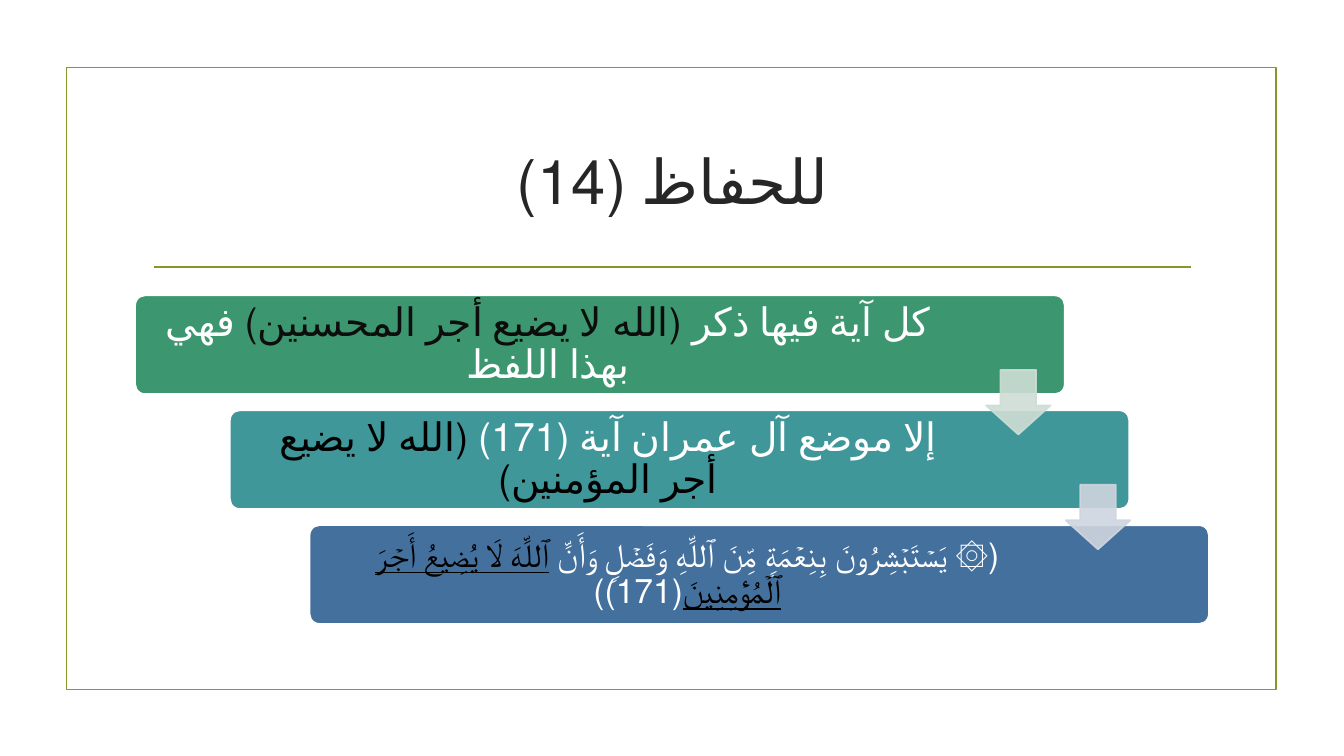
import pptx
import pptx.util
import pptx.dml.color
import pptx.enum.lang
import pptx.enum.shapes
import pptx.enum.text
from lxml import etree
from pptx.util import Inches, Pt

SHAPE = pptx.enum.shapes.MSO_SHAPE
MIDDLE = pptx.enum.text.MSO_ANCHOR.MIDDLE
ARABIC = pptx.enum.lang.MSO_LANGUAGE_ID.ARABIC
COLORS = {"olive": "83992A", "title": "262626", "white": "FFFFFF",
          "ink": "0D0D0D", "black": "000000", "green": "3C9770",
          "teal": "40979A", "blue": "44709D",
          "arrow green": "CEDDD5", "arrow blue": "CFD5DF"}
STEP_HEIGHT, STEP_PITCH = 0.98, 1.14
ARROW_SIZE = 0.64

# left, width, right inset, fill, text size, runs of (text, colour, underline)
STEPS = [
    (1.34, 9.22, 1.18, "green", 28,
     [("كل آية فيها ذكر ", "white", False),
      ("(الله لا يضيع أجر المحسنين)", "ink", False),
      (" فهي بهذا اللفظ", "white", False)]),
    (2.28, 8.92, 1.57, "teal", 28,
     [("إلا موضع آل عمران آية (171) ", "white", False),
      ("(الله لا يضيع أجر المؤمنين)", "black", False)]),
    (3.07, 8.92, 1.58, "blue", 24,
     [("(۞ یَسۡتَبۡشِرُونَ بِنِعۡمَةࣲ مِّنَ ٱللَّهِ وَفَضۡلࣲ وَأَنَّ ", "white", False),
      ("ٱللَّهَ لَا یُضِیعُ أَجۡرَ ٱلۡمُؤۡمِنِینَ", "black", True),
      ("(171))", "white", False)]),
]
ARROWS = [(9.78, "arrow green"), (10.57, "arrow blue")]


def rgb(name):
    return pptx.dml.color.RGBColor.from_string(COLORS[name])


def add_box(s, kind, left, top, width, height, fill, line):
    sp = s.shapes.add_shape(kind, Inches(left), Inches(top), Inches(width), Inches(height))
    sp.shadow.inherit = False
    if fill:
        sp.fill.solid()
        sp.fill.fore_color.rgb = rgb(fill)
    else:
        sp.fill.background()
    sp.line.color.rgb = rgb(line)
    sp.line.width = Pt(1.25)
    return sp


def write_rtl(tf, size, runs):
    """Fill the frame with one centred right-to-left paragraph."""
    tf.word_wrap = True
    tf.vertical_anchor = MIDDLE
    p = tf.paragraphs[0]
    p.alignment = pptx.enum.text.PP_ALIGN.CENTER
    p._p.get_or_add_pPr().set("rtl", "1")
    p.font.name = "Lato"
    p.font.size = Pt(size)
    for text, color, underline in runs:
        r = p.add_run()
        r.text = text
        r.font.name = "Lato"
        r.font.size = Pt(size)
        r.font.language_id = ARABIC
        r.font.color.rgb = rgb(color)
        if underline:
            r.font.underline = True
    return p


def add_frame(s, left, top, width, height):
    add_box(s, SHAPE.RECTANGLE, left, top, width, height, None, "olive")
    rule = s.shapes.add_connector(pptx.enum.shapes.MSO_CONNECTOR.STRAIGHT,
                                  Inches(left + 0.87), Inches(top + 1.98),
                                  Inches(left + 11.15), Inches(top + 1.98))
    rule.line.color.rgb = rgb("olive")
    rule.line.width = Pt(1.25)
    etree.SubElement(rule._element.spPr, pptx.oxml.ns.qn("a:effectLst"))


def add_title(s, left, top, width, height):
    tb = s.shapes.add_textbox(Inches(left), Inches(top), Inches(width), Inches(height))
    write_rtl(tb.text_frame, 44, [("للحفاظ (14)", "title", False)])


def add_step(s, top, left, width, right_inset, fill, size, runs):
    sp = add_box(s, SHAPE.ROUNDED_RECTANGLE, left, top, width, STEP_HEIGHT, fill, "white")
    sp.adjustments[0] = 0.1
    tf = sp.text_frame
    tf.margin_left, tf.margin_right = Inches(0.15), Inches(right_inset)
    tf.margin_top = tf.margin_bottom = 0
    write_rtl(tf, size, runs).line_spacing = 0.9


def add_arrow(s, left, top, color):
    sp = add_box(s, SHAPE.DOWN_ARROW, left, top, ARROW_SIZE, ARROW_SIZE, color, color)
    sp.adjustments[0], sp.adjustments[1] = 0.55, 0.45
    for clr in sp._element.spPr.iter(pptx.oxml.ns.qn("a:srgbClr")):
        etree.SubElement(clr, pptx.oxml.ns.qn("a:alpha"), val="90000")


def add_staircase(s, top):
    """Stack the steps downwards, with an arrow from each to the next."""
    for i, step in enumerate(STEPS):
        add_step(s, top + i * STEP_PITCH, *step)
    for i, (left, color) in enumerate(ARROWS):
        add_arrow(s, left, top + 0.74 + i * STEP_PITCH, color)


def main():
    prs = pptx.Presentation()
    prs.slide_width, prs.slide_height = Inches(13.33), Inches(7.5)
    s = prs.slides.add_slide(prs.slide_layouts[6])
    add_frame(s, 0.66, 0.67, 12, 6.17)
    add_title(s, 1.42, 1.07, 10.5, 1.43)
    add_staircase(s, 2.93)
    prs.save("out.pptx")


if __name__ == "__main__":
    main()
